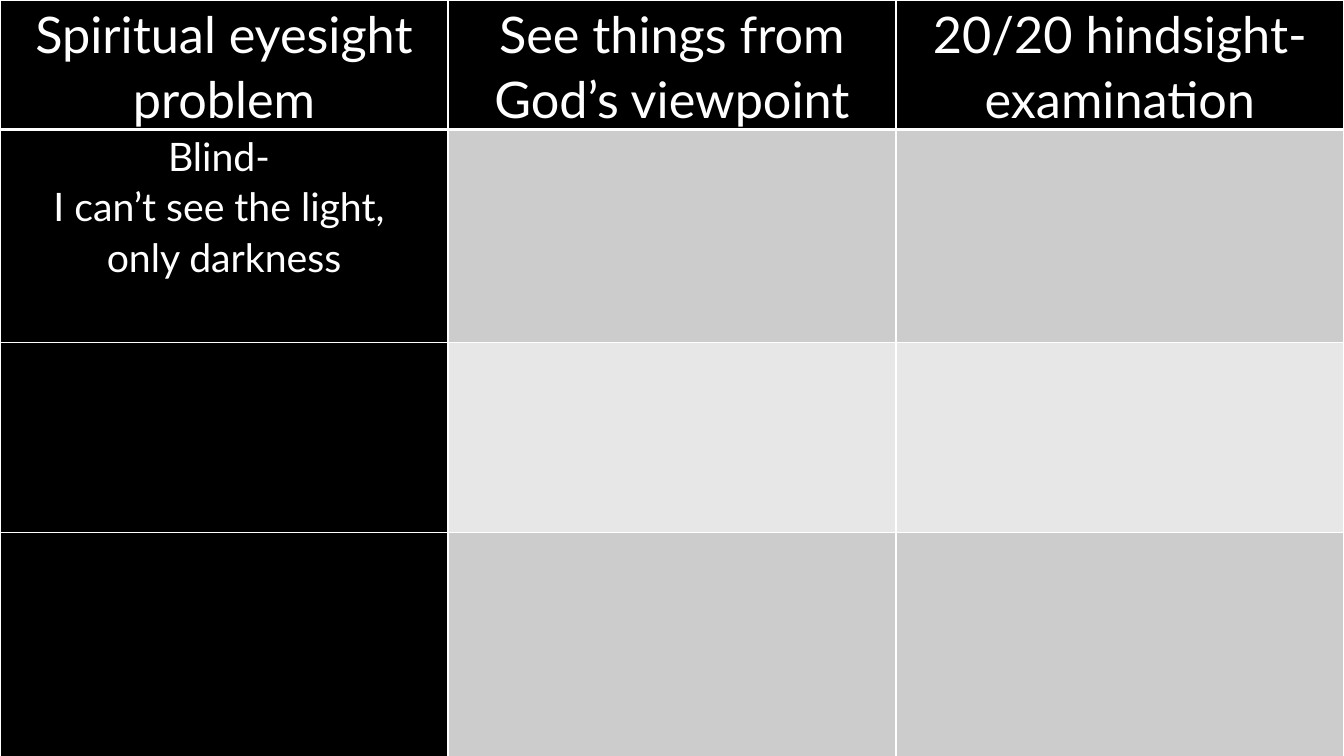
from lxml.etree import SubElement
from pptx import Presentation
from pptx.dml.color import RGBColor
from pptx.enum.text import PP_ALIGN
from pptx.oxml import parse_xml
from pptx.oxml.ns import nsdecls, qn
from pptx.util import Pt

SLIDE_WIDTH, SLIDE_HEIGHT = 960, 540
FONT = "Lato"
COLORS = {
    "black": "000000",
    "white": "FFFFFF",
    "dark band": "CCCCCC",
    "light band": "E7E7E7",
}
ROWS = [
    ["Spiritual eyesight problem", "See things from God’s viewpoint",
     "20/20 hindsight- examination"],
    ["Blind- \nI can’t see the light, \nonly darkness", "", ""],
    ["", "", ""],
    ["", "", ""],
]
ROW_HEIGHTS = [89.3, 152, 136, 162.7]
HEADER_SIZE, BODY_SIZE = 36, 28
THIN, THICK = 1, 3


def cell_color(row, column):
    if row == 0 or column == 0:
        return COLORS["black"]
    return COLORS["dark band" if row % 2 else "light band"]


def add_borders(cell, row):
    """Draw white cell borders, thick along the foot of the header row."""
    widths = {
        "lnL": THIN,
        "lnR": THIN,
        "lnT": THICK if row == 1 else THIN,
        "lnB": THICK if row == 0 else THIN,
    }
    properties = cell._tc.get_or_add_tcPr()
    for index, (side, width) in enumerate(widths.items()):
        line = parse_xml(f'<a:{side} {nsdecls("a")} w="{Pt(width)}"/>')
        fill = SubElement(line, qn("a:solidFill"))
        SubElement(fill, qn("a:srgbClr"), val=COLORS["white"])
        properties.insert(index, line)


def write_text(cell, text, size):
    cell.margin_left = cell.margin_right = Pt(5)
    cell.margin_top = cell.margin_bottom = Pt(0)
    cell.text_frame.text = text
    for para in cell.text_frame.paragraphs:
        para.alignment = PP_ALIGN.CENTER
        para.line_spacing = 1.07
        for span in para.runs:
            span.font.name = FONT
            span.font.size = Pt(size)
            span.font.bold = False
            span.font.color.rgb = RGBColor.from_string(COLORS["white"])


def main():
    deck = Presentation()
    deck.slide_width, deck.slide_height = Pt(SLIDE_WIDTH), Pt(SLIDE_HEIGHT)
    slide = deck.slides.add_slide(deck.slide_layouts[6])
    background = slide.background.fill
    background.solid()
    background.fore_color.rgb = RGBColor.from_string(COLORS["black"])

    table = slide.shapes.add_table(
        len(ROWS), len(ROWS[0]), Pt(0), Pt(0), Pt(SLIDE_WIDTH), Pt(SLIDE_HEIGHT)
    ).table
    for row, (texts, height) in enumerate(zip(ROWS, ROW_HEIGHTS)):
        table.rows[row].height = Pt(height)
        for column, text in enumerate(texts):
            cell = table.cell(row, column)
            cell.fill.solid()
            cell.fill.fore_color.rgb = RGBColor.from_string(cell_color(row, column))
            add_borders(cell, row)
            if text:
                write_text(cell, text, BODY_SIZE if row else HEADER_SIZE)

    deck.save("out.pptx")


if __name__ == "__main__":
    main()
